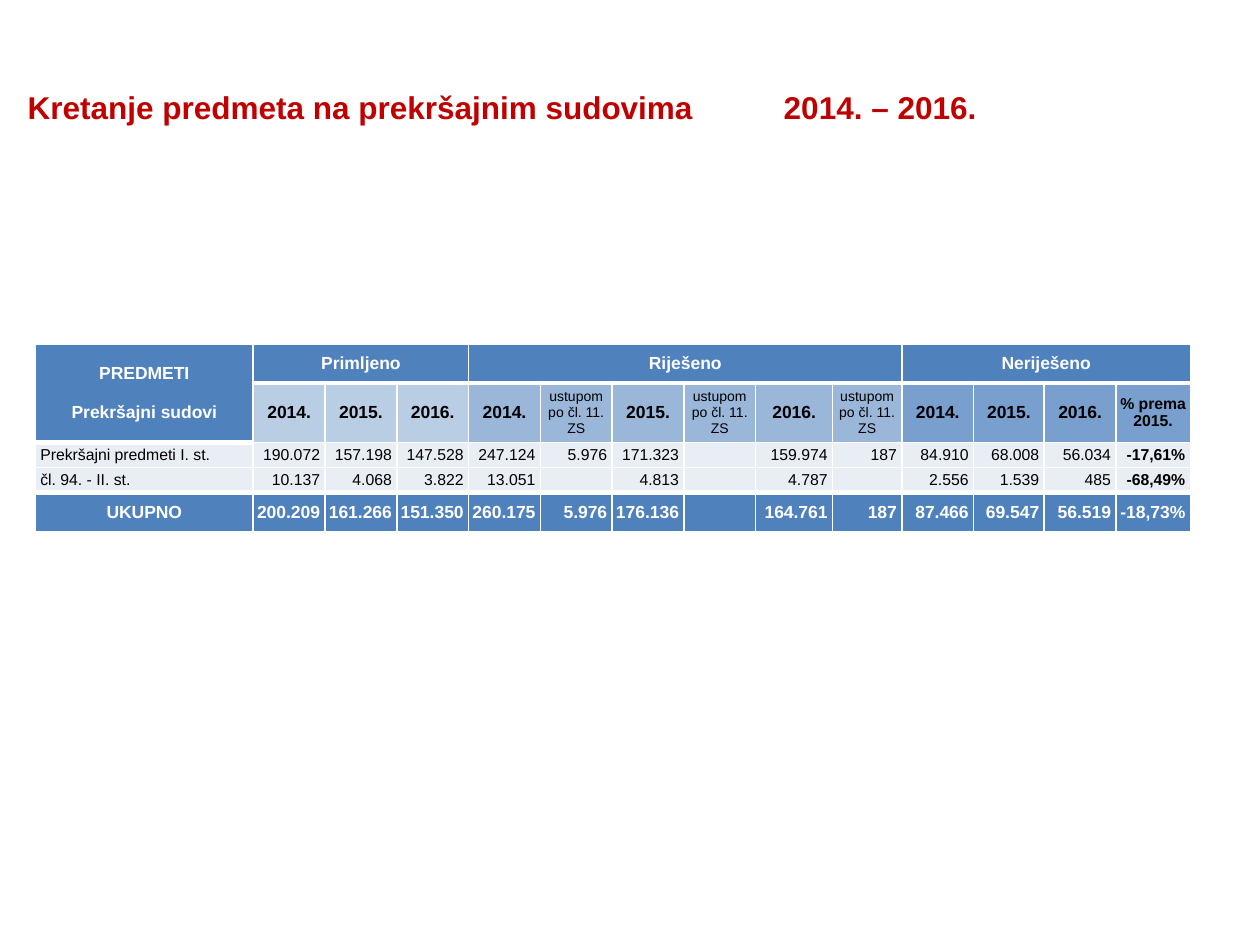
"""Build the slide on the flow of cases at misdemeanour courts."""
from dataclasses import dataclass

from lxml import etree
from pptx import Presentation
from pptx.dml.color import RGBColor
from pptx.enum.text import MSO_ANCHOR, MSO_AUTO_SIZE, PP_ALIGN
from pptx.oxml.ns import qn
from pptx.util import Inches, Pt

LEFT, MID, RIGHT = PP_ALIGN.LEFT, PP_ALIGN.CENTER, PP_ALIGN.RIGHT
CENTRE = MSO_ANCHOR.MIDDLE
FIXED = MSO_AUTO_SIZE.NONE
WIDE, HIGH = Inches(10), Inches(7.5)
INSET = Inches(0.04)


@dataclass(frozen=True)
class Theme:
    """Hold the colours, font and sizes."""
    font: str = "Arial"
    title: str = "C00000"
    dark: str = "4F81BD"
    pale: str = "E9EDF4"
    white: str = "FFFFFF"
    black: str = "000000"
    huge: float = 18
    large: float = 10
    body: float = 9
    small: float = 8
    thin: float = 1
    thick: float = 3


@dataclass(frozen=True)
class Group:
    """Describe one group of columns under a shared heading."""
    name: str
    fill: str
    heads: tuple[str, ...]


THEME = Theme()
NOTE = "ustupom po čl. 11. ZS"
RATE = "% prema 2015."
GROUPS = (
    Group("Primljeno", "B9CDE5", ("2014.", "2015.", "2016.")),
    Group("Riješeno", "9AB7DA", ("2014.", NOTE, "2015.", NOTE, "2016.", NOTE)),
    Group("Neriješeno", "789FCE", ("2014.", "2015.", "2016.", RATE)),
)
SIZES = {NOTE: THEME.small, RATE: THEME.body}
ROWS = (
    ("Prekršajni predmeti I. st.", "190.072", "157.198", "147.528", "247.124", "5.976",
     "171.323", "", "159.974", "187", "84.910", "68.008", "56.034", "-17,61%"),
    ("čl. 94. - II. st.", "10.137", "4.068", "3.822", "13.051", "",
     "4.813", "", "4.787", "", "2.556", "1.539", "485", "-68,49%"),
    ("UKUPNO", "200.209", "161.266", "151.350", "260.175", "5.976",
     "176.136", "", "164.761", "187", "87.466", "69.547", "56.519", "-18,73%"),
)
COLS = (1.73, *[0.57] * 7, 0.61, 0.55, 0.57, 0.56, 0.57, 0.59)
BANDS = (0.31, 0.35, 0.2, 0.2, 0.31)
LAST = len(BANDS) - 1


def write(frame, text: str, *, size: float, color: str, bold: bool = False,
          align=LEFT, gap: float = 0) -> None:
    """Fill a text frame, one paragraph for each line."""
    for i, line in enumerate(text.split("\n")):
        para = frame.paragraphs[0] if i == 0 else frame.add_paragraph()
        para.alignment = align
        para.space_before = Pt(gap if i else 0)
        if not line:
            etree.SubElement(para._p, qn("a:endParaRPr"), sz=str(int(size * 100)))
            continue
        run = para.add_run()
        run.text = line
        font = run.font
        font.name, font.size, font.bold = THEME.font, Pt(size), bold
        font.color.rgb = RGBColor.from_string(color)


def edge(cell, top: float, base: float) -> None:
    """Draw the four white borders of a cell."""
    props = cell._tc.get_or_add_tcPr()
    sides = (("L", THEME.thin), ("R", THEME.thin), ("T", top), ("B", base))
    for i, (side, width) in enumerate(sides):
        line = etree.Element(qn(f"a:ln{side}"), w=str(Pt(width)))
        fill = etree.SubElement(line, qn("a:solidFill"))
        etree.SubElement(fill, qn("a:srgbClr"), val=THEME.white)
        props.insert(i, line)


def paint(cell, text: str, fill: str, *, align=MID, **style) -> None:
    """Fill a cell with colour and text."""
    cell.fill.solid()
    cell.fill.fore_color.rgb = RGBColor.from_string(fill)
    cell.vertical_anchor = CENTRE
    cell.margin_top = cell.margin_bottom = 0
    cell.margin_left = INSET if align == LEFT else 0
    cell.margin_right = INSET if align == RIGHT else 0
    write(cell.text_frame, text, align=align, **style)


def head(table) -> None:
    """Write the two heading rows."""
    bright = dict(size=THEME.large, color=THEME.white, bold=True)
    table.cell(0, 0).merge(table.cell(1, 0))
    paint(table.cell(0, 0), "PREDMETI\nPrekršajni sudovi", THEME.dark, gap=11.5, **bright)
    col = 1
    for group in GROUPS:
        top = table.cell(0, col)
        top.merge(table.cell(0, col + len(group.heads) - 1))
        paint(top, group.name, THEME.dark, **bright)
        for text in group.heads:
            paint(table.cell(1, col), text, group.fill, color=THEME.black,
                  size=SIZES.get(text, THEME.large), bold=text != NOTE)
            col += 1


def fill(table) -> None:
    """Write the rows of figures and their total."""
    for r, row in enumerate(ROWS, 2):
        total = r == LAST
        for c, text in enumerate(row):
            first = MID if total else LEFT
            paint(table.cell(r, c), text, THEME.dark if total else THEME.pale,
                  align=RIGHT if c else first,
                  size=THEME.large if total else THEME.body,
                  color=THEME.white if total else THEME.black,
                  bold=total or c == len(COLS) - 1)


def rule(table) -> None:
    """Border every cell, thick below the heads and above the total."""
    for r in range(len(BANDS)):
        for c in range(len(COLS)):
            thick = {2, LAST} if c == 0 else {1, LAST}
            edge(table.cell(r, c), *(THEME.thick if n in thick else THEME.thin
                                     for n in (r, r + 1)))


def grid(slide) -> None:
    """Place the table and size its grid."""
    shape = slide.shapes.add_table(
        len(BANDS), len(COLS), int(WIDE * 0.028), int(HIGH * 0.364),
        Inches(sum(COLS)), Inches(sum(BANDS)))
    table = shape.table
    table.horz_banding = False
    for col, width in zip(table.columns, COLS):
        col.width = Inches(width)
    for row, height in zip(table.rows, BANDS):
        row.height = Inches(height)
    head(table)
    fill(table)
    rule(table)


def title(slide) -> None:
    """Move and format the title."""
    shape = slide.shapes.title
    shape.left, shape.top = 0, int(HIGH * 0.08)
    shape.width, shape.height = WIDE, Inches(0.5)
    frame = shape.text_frame
    frame.auto_size, frame.word_wrap = FIXED, True
    frame.vertical_anchor = CENTRE
    frame.margin_left, frame.margin_right = Inches(0.22), Inches(0.1)
    frame.margin_top = frame.margin_bottom = Inches(0.05)
    props = frame.paragraphs[0]._p.get_or_add_pPr()
    tabs = etree.SubElement(props, qn("a:tabLst"))
    etree.SubElement(tabs, qn("a:tab"), pos=str(Inches(6)), algn="l")
    write(frame, "Kretanje predmeta na prekršajnim sudovima\t2014. – 2016.",
          size=THEME.huge, color=THEME.title, bold=True)


def main() -> None:
    """Build and save the deck."""
    deck = Presentation()
    deck.slide_width, deck.slide_height = WIDE, HIGH
    slide = deck.slides.add_slide(deck.slide_layouts[5])
    grid(slide)
    title(slide)
    deck.save("out.pptx")


if __name__ == "__main__":
    main()
